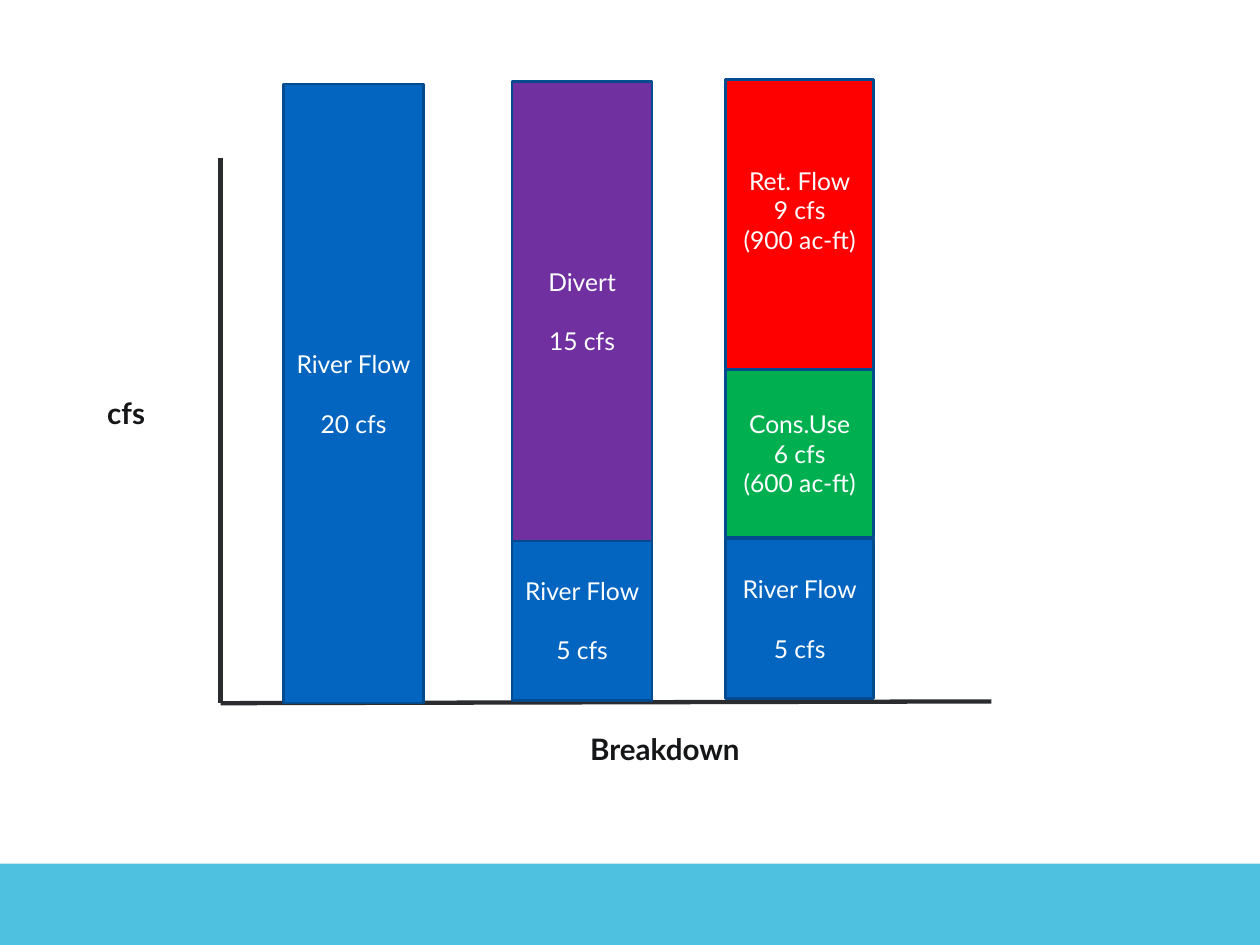
from dataclasses import dataclass

from lxml import etree
from pptx import Presentation
from pptx import util as u
from pptx.dml.color import RGBColor
from pptx.enum import shapes, text
from pptx.oxml import ns

EMU_PER_PX = 9144  # 100 px to the inch
SLIDE_WIDTH, SLIDE_HEIGHT = 1422, 1067
BAND_TOP = 975
AXIS_X = 249
FONT = "Lato"
BLUE, GREEN, RED, PURPLE = "0365C0", "00B050", "FF0000", "7030A0"
OUTLINE, AXIS, INK, WHITE, BAND = "024B8E", "2A2C2F", "151618", "FFFFFF", "4DC1DF"
INSETS = {"margin_left": 14, "margin_top": 7, "margin_right": 14, "margin_bottom": 7}
LINE_HEIGHT_PT = 24
LIFTED_INSET = 40


@dataclass(frozen=True)
class Segment:
    lines: tuple[str, ...]
    top: int
    height: int
    fill: str
    bottom_inset: int = INSETS["margin_bottom"]


@dataclass(frozen=True)
class Bar:
    left: int
    width: int
    segments: tuple[Segment, ...]


@dataclass(frozen=True)
class AxisLabel:
    words: str
    left: int
    top: int
    width: int
    height: int = 55


@dataclass(frozen=True)
class AxisLine:
    start: tuple[int, int]
    end: tuple[int, int]


BARS = (
    Bar(320, 158, (Segment(("River Flow", "20 cfs"), 95, 699, BLUE),)),
    Bar(819, 167, (
        Segment(("River Flow", "5 cfs"), 608, 181, BLUE),
        Segment(("Cons.Use", "6 cfs", "(600 ac-ft)"), 417, 190, GREEN),
        Segment(("Ret. Flow", "9 cfs", "(900 ac-ft)"), 90, 327, RED, LIFTED_INSET),
    )),
    Bar(578, 158, (
        Segment(("River Flow", "5 cfs"), 610, 181, BLUE),
        Segment(("Divert", "15 cfs"), 92, 519, PURPLE),
    )),
)
AXIS_LINES = (AxisLine((AXIS_X, 178), (AXIS_X, 794)), AxisLine((1119, 792), (AXIS_X, 794)))
AXIS_LABELS = (AxisLabel("cfs", 107, 439, 107), AxisLabel("Breakdown", 652, 818, 356))


def px(length: int) -> u.Emu:
    return u.Emu(length * EMU_PER_PX)


def color(value: str) -> RGBColor:
    return RGBColor.from_string(value)


def set_attributes(target, values: dict) -> None:
    for name, value in values.items():
        setattr(target, name, value)


def format_frame(frame, anchor, bottom_inset: int = INSETS["margin_bottom"]) -> None:
    insets = {**INSETS, "margin_bottom": bottom_inset}
    set_attributes(frame, {name: px(size) for name, size in insets.items()})
    set_attributes(frame, {"word_wrap": True, "vertical_anchor": anchor})


def write_run(paragraph, words: str, size: int, ink: str, bold: bool = False) -> None:
    run = paragraph.add_run()
    run.text = words
    set_attributes(run.font, {"name": FONT, "size": u.Pt(size), "bold": bold})
    run.font.color.rgb = color(ink)


def add_rectangle(slide, left: int, top: int, width: int, height: int, fill: str):
    shape = slide.shapes.add_shape(
        shapes.MSO_SHAPE.RECTANGLE, px(left), px(top), px(width), px(height))
    shape.shadow.inherit = False
    shape.fill.solid()
    shape.fill.fore_color.rgb = color(fill)
    return shape


def add_axis_line(slide, axis: AxisLine) -> None:
    connector = slide.shapes.add_connector(
        shapes.MSO_CONNECTOR.STRAIGHT, *map(px, axis.start + axis.end))
    connector.line.width = u.Pt(3.5)
    connector.line.color.rgb = color(AXIS)
    etree.SubElement(connector._element.spPr, ns.qn("a:effectLst"))


def add_axis_label(slide, label: AxisLabel) -> None:
    box = slide.shapes.add_textbox(
        px(label.left), px(label.top), px(label.width), px(label.height))
    format_frame(box.text_frame, text.MSO_ANCHOR.TOP)
    write_run(box.text_frame.paragraphs[0], label.words, 24, INK, bold=True)


def add_segment(slide, bar: Bar, segment: Segment) -> None:
    """Draw one block of a bar; a two-line caption is set one line apart."""
    shape = add_rectangle(
        slide, bar.left, segment.top, bar.width, segment.height, segment.fill)
    shape.line.width = u.Pt(2)
    shape.line.color.rgb = color(OUTLINE)
    frame = shape.text_frame
    format_frame(frame, text.MSO_ANCHOR.MIDDLE, segment.bottom_inset)
    for index, words in enumerate(segment.lines):
        paragraph = frame.add_paragraph() if index else frame.paragraphs[0]
        paragraph.alignment = text.PP_ALIGN.CENTER
        if index and len(segment.lines) == 2:
            paragraph.space_before = u.Pt(LINE_HEIGHT_PT)
        write_run(paragraph, words, 20, WHITE)


def main() -> None:
    presentation = Presentation()
    set_attributes(presentation, {
        "slide_width": px(SLIDE_WIDTH), "slide_height": px(SLIDE_HEIGHT)})
    slide = presentation.slides.add_slide(presentation.slide_layouts.get_by_name("Blank"))

    band = add_rectangle(slide, 0, BAND_TOP, SLIDE_WIDTH, SLIDE_HEIGHT - BAND_TOP, BAND)
    band.line.fill.background()
    for axis in AXIS_LINES:
        add_axis_line(slide, axis)
    for label in AXIS_LABELS:
        add_axis_label(slide, label)
    for bar in BARS:
        for segment in bar.segments:
            add_segment(slide, bar, segment)

    presentation.save("out.pptx")


if __name__ == "__main__":
    main()
